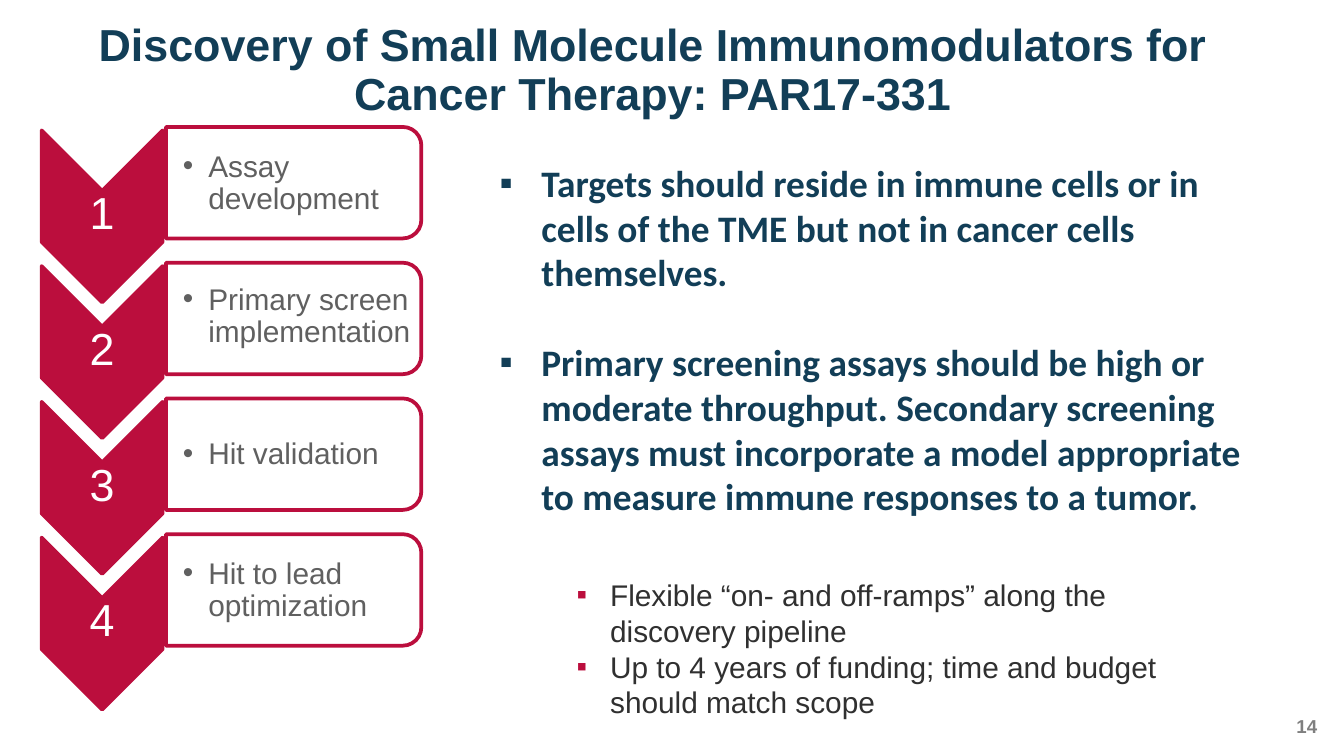
from lxml import etree
from pptx import Presentation
from pptx.dml.color import RGBColor
from pptx.enum.shapes import MSO_SHAPE
from pptx.enum.text import MSO_ANCHOR, PP_ALIGN
from pptx.oxml.ns import qn
from pptx.util import Inches, Pt

CHEVRON = MSO_SHAPE.CHEVRON
ROUNDED_BOX = MSO_SHAPE.ROUND_2_SAME_RECTANGLE
TOP, MIDDLE, BOTTOM = MSO_ANCHOR.TOP, MSO_ANCHOR.MIDDLE, MSO_ANCHOR.BOTTOM
LEFT, CENTER, RIGHT = PP_ALIGN.LEFT, PP_ALIGN.CENTER, PP_ALIGN.RIGHT

NAVY, CRIMSON, WHITE = "123E57", "BB0E3D", "FFFFFF"
SLIDE_WIDTH = 10
SLIDE_HEIGHT = SLIDE_WIDTH * 9 / 16
ROW_PITCH = 1.01

# Each step with the top of its label
STEPS = [
    ("Assay development", 0.99),
    ("Primary screen implementation", 1.98),
    ("Hit validation", 3.01),
    ("Hit to lead optimization", 4.02),
]
REQUIREMENTS = [
    "Targets should reside in immune cells or in cells of the TME but not in "
    "cancer cells themselves.",
    "Primary screening assays should be high or moderate throughput. Secondary "
    "screening assays must incorporate a model appropriate to measure immune "
    "responses to a tumor.",
]
FUNDING_NOTES = [
    "Flexible “on- and off-ramps” along the discovery pipeline",
    "Up to 4 years of funding; time and budget should match scope",
]


def color(value):
    return RGBColor.from_string(value)


def add_bullet(paragraph, symbol, indent, bullet_color):
    properties = paragraph._p.get_or_add_pPr()
    properties.set("marL", str(Inches(indent)))
    properties.set("indent", str(-Inches(indent)))
    fill = etree.SubElement(properties, qn("a:buClr"))
    etree.SubElement(fill, qn("a:srgbClr"), val=bullet_color)
    etree.SubElement(properties, qn("a:buFont"), typeface="Arial")
    etree.SubElement(properties, qn("a:buChar"), char=symbol)


def add_text(slide, position, texts, size, text_color, font="Arial", bold=False,
             align=LEFT, anchor=TOP, insets=(0, 0, 0, 0), spacing=None,
             gap=0, bullet=None):
    """Add a text box; bullet is (symbol, indent in inches, color)."""
    shape = slide.shapes.add_textbox(*map(Inches, position))
    frame = shape.text_frame
    sides = ("margin_left", "margin_top", "margin_right", "margin_bottom")
    frame_format = dict(zip(sides, map(Inches, insets)))
    frame_format.update(word_wrap=True, vertical_anchor=anchor)
    for name, value in frame_format.items():
        setattr(frame, name, value)

    for index, text in enumerate(texts):
        paragraph = frame.add_paragraph() if index else frame.paragraphs[0]
        if bullet:
            add_bullet(paragraph, *bullet)
        paragraph_format = {"alignment": align, "line_spacing": spacing}
        if index and gap:
            paragraph_format["space_before"] = Pt(gap)
        for name, value in paragraph_format.items():
            setattr(paragraph, name, value)
        run = paragraph.add_run()
        run.text = text
        for name, value in {"name": font, "size": Pt(size), "bold": bold}.items():
            setattr(run.font, name, value)
        run.font.color.rgb = color(text_color)


def add_turned_shape(slide, kind, position, fill):
    shape = slide.shapes.add_shape(kind, *map(Inches, position))
    shape.rotation = 90
    shape.shadow.inherit = False
    shape.fill.solid()
    shape.fill.fore_color.rgb = color(fill)
    shape.line.color.rgb = color(CRIMSON)
    shape.line.width = Pt(2)


def add_step(slide, index, text, label_top):
    offset = index * ROW_PITCH
    add_turned_shape(slide, CHEVRON, (0.12, 1.16 + offset, 1.28, 0.9), CRIMSON)
    add_text(slide, (0.31, 1.41 + offset, 0.9, 0.38), [str(index + 1)], 24, WHITE,
             align=CENTER, anchor=MIDDLE, insets=(0.02,) * 4, spacing=0.9)
    add_turned_shape(slide, ROUNDED_BOX, (1.77, 0.41 + offset, 0.83, 1.9), WHITE)
    add_text(slide, (1.24, label_top, 1.87, 0.75), [text], 16, "606060",
             anchor=MIDDLE, insets=(0.12, 0.01, 0.01, 0.01), spacing=0.9,
             bullet=("•", 0.19, "606060"))


def main():
    presentation = Presentation()
    presentation.slide_width = Inches(SLIDE_WIDTH)
    presentation.slide_height = Inches(SLIDE_HEIGHT)
    slide = presentation.slides.add_slide(presentation.slide_layouts[6])

    # Title and slide number
    add_text(slide, (0.39, 0.54, 8.93, 0.35),
             ["Discovery of Small Molecule Immunomodulators for Cancer Therapy: "
              "PAR17-331"],
             24, NAVY, bold=True, align=CENTER, anchor=BOTTOM, spacing=0.9)
    add_text(slide, (9.46, 5.32, 0.34, 0.2), ["14"], 10, "7F7F7F", bold=True,
             align=RIGHT)

    # Discovery pipeline
    for index, (text, label_top) in enumerate(STEPS):
        add_step(slide, index, text, label_top)

    # Requirements, one line apart
    add_text(slide, (3.62, 1.14, 5.76, 2.79), REQUIREMENTS, 20, NAVY,
             font="Calibri", bold=True, insets=(0.1, 0.05, 0.1, 0.05), gap=24,
             bullet=("▪", 0.31, NAVY))

    # Funding notes
    add_text(slide, (4.29, 4.29, 4.53, 1.15), FUNDING_NOTES, 16, "303030",
             bullet=("▪", 0.25, CRIMSON))

    presentation.save("out.pptx")


if __name__ == "__main__":
    main()
